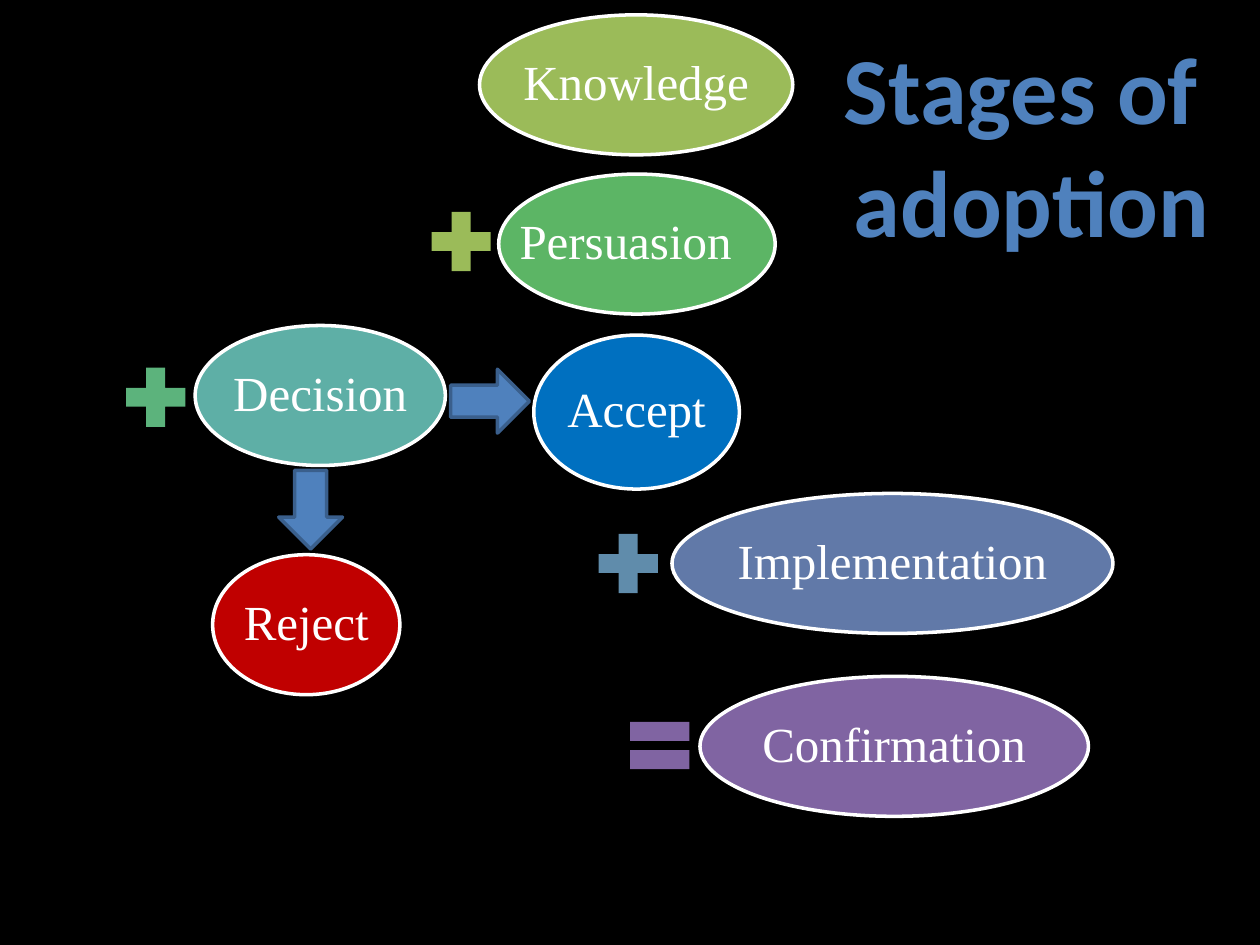
from pptx import Presentation
from pptx import util as u
from pptx.dml.color import RGBColor
from pptx.enum import shapes, text

COLORS = {
    "black": "000000", "white": "FFFFFF", "blue": "4F81BD", "navy": "3A5F8C",
    "olive": "9BBB59", "green": "5CB565", "mint": "5CB37C", "teal": "5EAFA6",
    "steel": "608CAB", "slate": "6179A8", "purple": "8064A2",
    "red": "C00000", "azure": "0070C0",
}
SHAPE = shapes.MSO_SHAPE
OVAL_H = 80
SIGN = 46


class StageSlide:
    def __init__(self, prs):
        self.s = prs.slides.add_slide(prs.slide_layouts[5])
        fill = self.s.background.fill
        fill.solid()
        fill.fore_color.rgb = self.color("black")

    def color(self, name):
        return RGBColor.from_string(COLORS[name])

    def run(self, p, words, font, size, color, bold=False):
        r = p.add_run()
        r.text = words
        r.font.name, r.font.size, r.font.bold = font, u.Pt(size), bold
        r.font.color.rgb = self.color(color)

    def title(self, lines, x, y, w, h):
        sp = self.s.shapes.title
        sp.left, sp.top, sp.width, sp.height = map(u.Pt, (x, y, w, h))
        tf = sp.text_frame
        tf.word_wrap = False
        tf.auto_size = text.MSO_AUTO_SIZE.SHAPE_TO_FIT_TEXT
        tf.vertical_anchor = text.MSO_ANCHOR.TOP
        for i, line in enumerate(lines):
            p = tf.add_paragraph() if i else tf.paragraphs[0]
            p.alignment = text.PP_ALIGN.CENTER
            self.run(p, line, "Calibri", 54, "blue", True)

    def shape(self, kind, x, y, w, h, fill, line=None):
        sp = self.s.shapes.add_shape(kind, *map(u.Pt, (x, y, w, h)))
        sp.shadow.inherit = False
        sp.fill.solid()
        sp.fill.fore_color.rgb = self.color(fill)
        if line:
            sp.line.color.rgb = self.color(line)
            sp.line.width = u.Pt(2)
        else:
            sp.line.fill.background()
        return sp

    def stage(self, words, x, y, w, fill, h=OVAL_H, right=0):
        sp = self.shape(SHAPE.OVAL, x, y, w, h, fill, "white")
        tf = sp.text_frame
        tf.word_wrap = False
        tf.vertical_anchor = text.MSO_ANCHOR.MIDDLE
        tf.margin_left = tf.margin_top = tf.margin_bottom = 0
        tf.margin_right = u.Pt(right)
        p = tf.paragraphs[0]
        p.alignment = text.PP_ALIGN.CENTER
        p.line_spacing = 0.9
        self.run(p, words, "Times New Roman", 28, "white")

    def sign(self, kind, x, y, fill):
        self.shape(kind, x, y, SIGN, SIGN, fill)

    def arrow(self, x, y, rotation=0):
        sp = self.shape(SHAPE.RIGHT_ARROW, x, y, 45, 36.5, "blue", "navy")
        sp.rotation = rotation


def main():
    prs = Presentation()
    prs.slide_width, prs.slide_height = u.Pt(720), u.Pt(540)
    slide = StageSlide(prs)

    slide.stage("Knowledge", 274, 8.5, 179, "olive")
    slide.sign(SHAPE.MATH_PLUS, 240.5, 115, "olive")
    slide.stage("Persuasion", 285, 99.5, 158, "green", right=13)
    slide.sign(SHAPE.MATH_PLUS, 66, 204, "mint")
    slide.stage("Decision", 111.5, 186, 143, "teal")
    slide.sign(SHAPE.MATH_PLUS, 336, 299, "steel")
    slide.stage("Implementation", 384, 282, 252, "slate")
    slide.sign(SHAPE.MATH_EQUAL, 354, 403, "purple")
    slide.stage("Confirmation", 400, 386.5, 222, "purple")
    slide.arrow(257.5, 211)
    slide.arrow(155, 273, 90)
    slide.stage("Reject", 121.5, 317, 107, "red")
    slide.stage("Accept", 305, 191.5, 117.5, "azure", h=88)
    slide.title(["Stages of ", "adoption"], 474, 13.5, 231, 138)

    prs.save("out.pptx")


if __name__ == "__main__":
    main()
